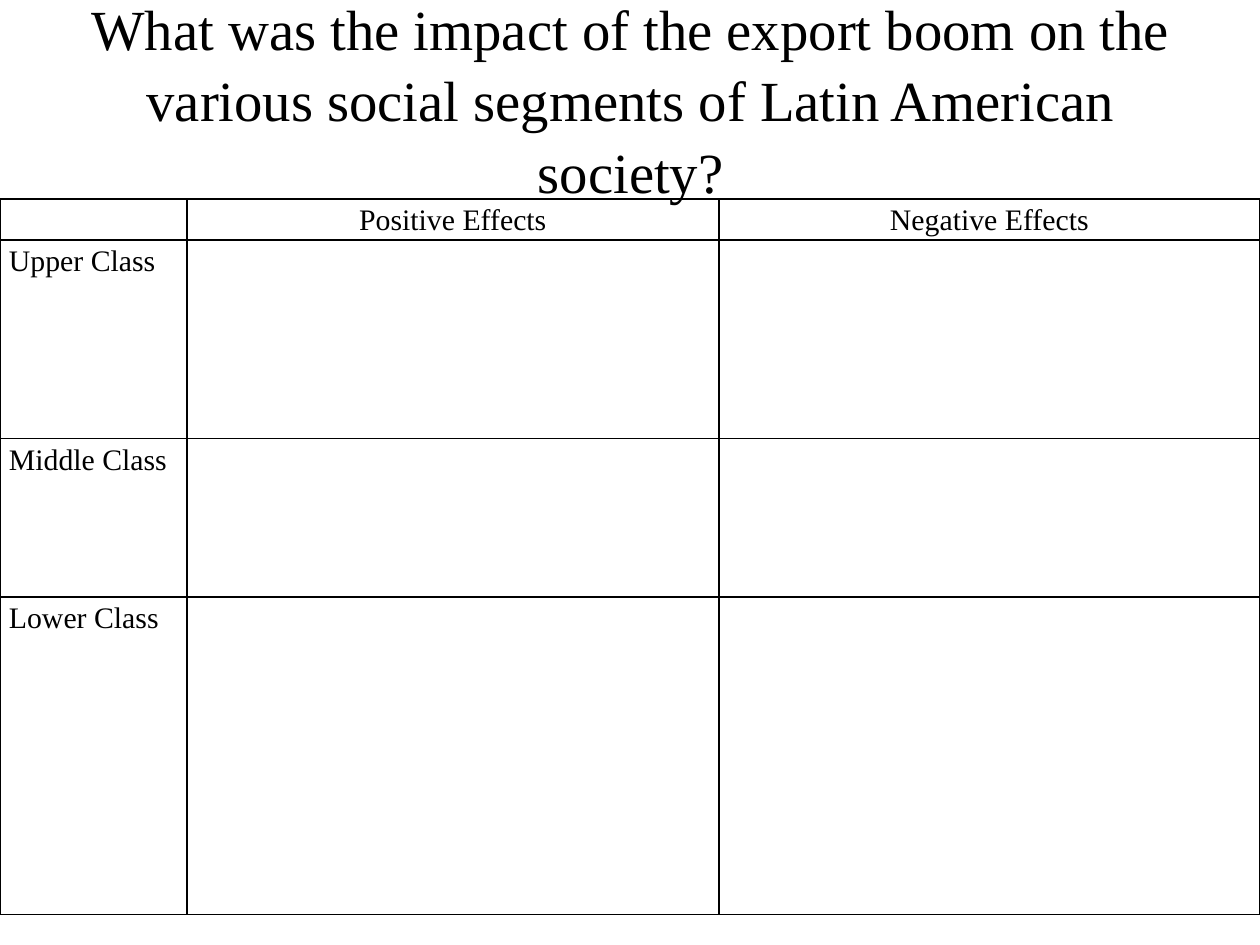
from lxml.etree import SubElement
from pptx import Presentation
from pptx.dml.color import RGBColor
from pptx.enum.text import MSO_ANCHOR, PP_ALIGN
from pptx.oxml.ns import qn
from pptx.util import Cm, Pt

BLACK = RGBColor(0, 0, 0)
FONT = "Times New Roman"
TITLE = ("What was the impact of the export boom on the various social "
         "segments of Latin American society?")
ROWS = [
    ("", "Positive Effects", "Negative Effects"),
    ("Upper Class", "", ""),
    ("Middle Class", "", ""),
    ("Lower Class", "", ""),
]
COLUMN_WIDTHS = [3.77, 10.72, 10.91]
ROW_HEIGHTS = [0.79, 4, 3.2, 6.4]


def write_text(text_frame, text, size, align=PP_ALIGN.LEFT, line_spacing=1.0):
    paragraph = text_frame.paragraphs[0]
    paragraph.text = text
    paragraph.alignment = align
    paragraph.line_spacing = line_spacing
    font = paragraph.font
    font.name = FONT
    font.size = Pt(size)
    font.color.rgb = BLACK


def add_title(slide, left, top, width, height):
    shape = slide.shapes.add_textbox(Cm(left), Cm(top), Cm(width), Cm(height))
    text_frame = shape.text_frame
    text_frame.word_wrap = True
    text_frame.vertical_anchor = MSO_ANCHOR.MIDDLE
    # The deep bottom margin lifts the centred text clear of the table.
    text_frame.margin_bottom = Cm(1.8)
    write_text(text_frame, TITLE, 32.4, align=PP_ALIGN.CENTER, line_spacing=1.05)


def add_borders(cell):
    properties = cell._tc.get_or_add_tcPr()
    for position, side in enumerate(("lnL", "lnR", "lnT", "lnB")):
        line = properties.makeelement(qn(f"a:{side}"), {"w": str(Pt(1))})
        fill = SubElement(line, qn("a:solidFill"))
        SubElement(fill, qn("a:srgbClr"), val=str(BLACK))
        properties.insert(position, line)


def add_effects_table(slide, left, top):
    frame = slide.shapes.add_table(
        len(ROWS), len(COLUMN_WIDTHS), Cm(left), Cm(top),
        Cm(sum(COLUMN_WIDTHS)), Cm(sum(ROW_HEIGHTS)))
    table = frame.table
    table.first_row = table.horz_banding = False
    for column, width in zip(table.columns, COLUMN_WIDTHS):
        column.width = Cm(width)
    for row, height, texts in zip(table.rows, ROW_HEIGHTS, ROWS):
        row.height = Cm(height)
        for cell, text in zip(row.cells, texts):
            cell.margin_left = cell.margin_right = Cm(0.18)
            cell.margin_top = cell.margin_bottom = 0
            cell.fill.background()
            add_borders(cell)
            align = PP_ALIGN.CENTER if texts is ROWS[0] else PP_ALIGN.LEFT
            write_text(cell.text_frame, text, 17, align=align, line_spacing=1.15)


def main():
    presentation = Presentation()
    presentation.slide_width = Cm(25.4)
    presentation.slide_height = Cm(19.05)
    slide = presentation.slides.add_slide(presentation.slide_layouts[6])
    add_title(slide, 1.07, 0.64, 23.29, 4.32)
    add_effects_table(slide, 0, 4.01)
    presentation.save("out.pptx")


if __name__ == "__main__":
    main()
